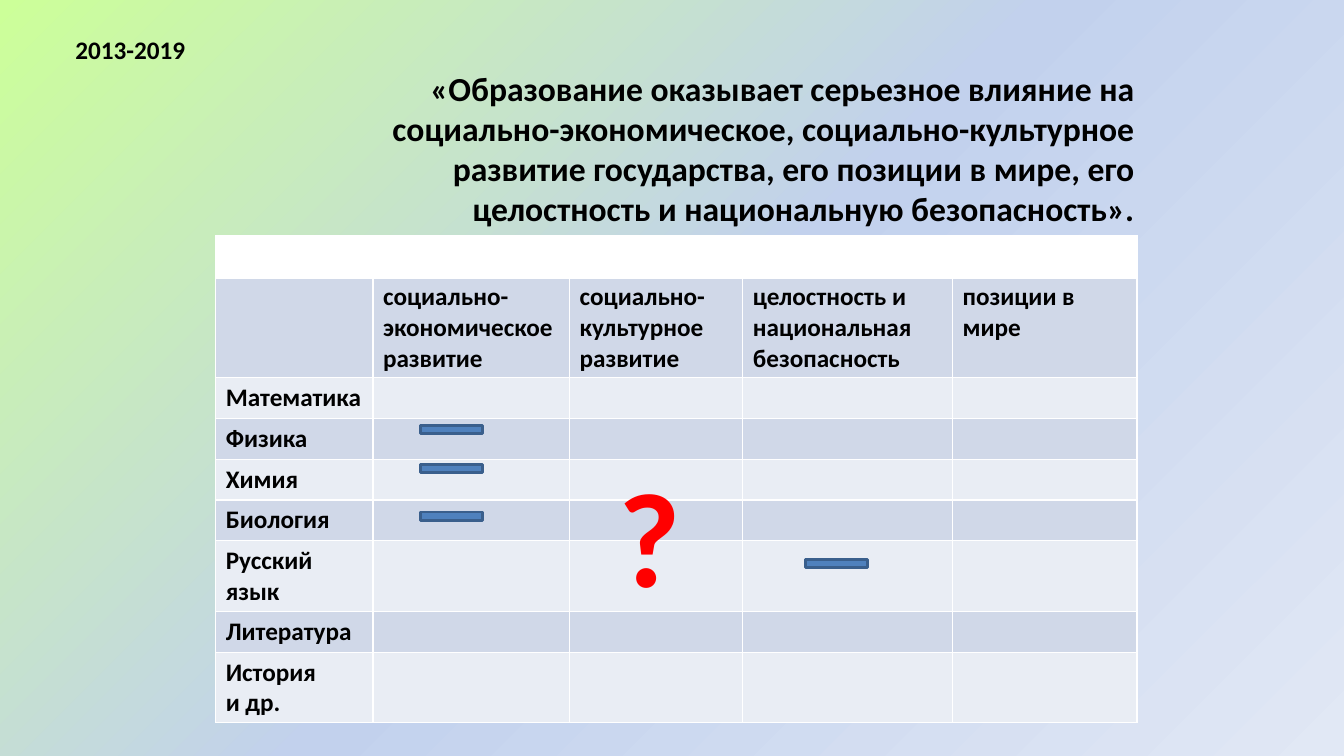
from copy import deepcopy

from lxml import etree
from pptx import Presentation
from pptx import util as u
from pptx.dml.color import RGBColor
from pptx.enum import shapes, text
from pptx.oxml import ns

BLACK = RGBColor(0x00, 0x00, 0x00)
WHITE = RGBColor(0xFF, 0xFF, 0xFF)
RED = RGBColor(0xFF, 0x00, 0x00)
BRICK = RGBColor(0xD7, 0x3A, 0x36)
BLUE = RGBColor(0x4F, 0x81, 0xBD)
DARK_BLUE = RGBColor(0x3A, 0x5F, 0x8C)
BAND_DARK = RGBColor(0xD0, 0xD8, 0xE8)
BAND_LIGHT = RGBColor(0xE9, 0xED, 0xF4)
BACKGROUND = [
    RGBColor(0xCC, 0xFF, 0x99),
    RGBColor(0xC2, 0xD1, 0xED),
    RGBColor(0xE1, 0xE8, 0xF5),
]

QUOTE = (
    "«Образование оказывает серьезное влияние на социально-экономическое, "
    "социально-культурное развитие государства, его позиции в мире, "
    "его целостность и национальную безопасность»."
)
ASPECTS = [
    "",
    "социально-экономическое развитие",
    "социально-культурное развитие",
    "целостность и национальная безопасность",
    "позиции в мире",
]
SUBJECTS = [
    "Математика",
    "Физика",
    "Химия",
    "Биология",
    "Русский язык",
    "Литература",
    "История\nи др.",
]
ASPECT_WIDTHS = [11.7, 14.63, 12.9, 15.6, 13.73]
MINUS_SIGNS = [(31.28, 56.27), (31.28, 61.47), (59.93, 74), (31.28, 67.73)]


class SlideBuilder:
    font = "Calibri"
    body_size = 18
    grid = 100

    def __init__(self, presentation):
        self.column = presentation.slide_width / self.grid
        self.row = presentation.slide_height / self.grid
        self.slide = presentation.slides.add_slide(presentation.slide_layouts[6])

    def box(self, left, top, width, height):
        units = (self.column, self.row, self.column, self.row)
        return [round(n * unit) for n, unit in zip((left, top, width, height), units)]

    def background(self, colors):
        fill = self.slide.background.fill
        fill.gradient()
        fill.gradient_angle = 315
        stop_list = self.slide.element.find(".//" + ns.qn("a:gsLst"))
        while len(stop_list) < len(colors):
            stop_list.append(deepcopy(stop_list[0]))
        for index, (stop, color) in enumerate(zip(fill.gradient_stops, colors)):
            stop.position = index / (len(colors) - 1)
            stop.color.rgb = color

    def line(self, parent, tag, position, color, points):
        line = etree.Element(ns.qn(tag), w=str(int(u.Pt(points))))
        solid = etree.SubElement(line, ns.qn("a:solidFill"))
        etree.SubElement(solid, ns.qn("a:srgbClr"), val=str(color))
        parent.insert(position, line)

    def add_runs(self, frame, words, size, color=BLACK, align=None):
        runs = []
        for index, words_line in enumerate(words.split("\n")):
            paragraph = frame.add_paragraph() if index else frame.paragraphs[0]
            paragraph.alignment = align
            run = paragraph.add_run()
            run.text = words_line
            run.font.name = self.font
            run.font.size = u.Pt(size)
            run.font.bold = True
            run.font.color.rgb = color
            runs.append(run)
        return runs

    def text(self, place, words, size, color=BLACK, align=None, outline=None):
        frame = self.slide.shapes.add_textbox(*self.box(*place)).text_frame
        frame.word_wrap = True
        frame.auto_size = text.MSO_AUTO_SIZE.SHAPE_TO_FIT_TEXT
        for run in self.add_runs(frame, words, size, color, align):
            if outline:
                self.line(run.font._element, "a:ln", 0, outline, 1.42)

    def cell(self, cell, words, color, top_border, bottom_border):
        cell.fill.solid()
        cell.fill.fore_color.rgb = color
        borders = {"L": 1, "R": 1, "T": top_border, "B": bottom_border}
        properties = cell._tc.get_or_add_tcPr()
        for position, (side, points) in enumerate(borders.items()):
            self.line(properties, f"a:ln{side}", position, WHITE, points)
        if words:
            self.add_runs(cell.text_frame, words, self.body_size)

    def table(self, left, top, widths, row_height, rows):
        place = self.box(left, top, sum(widths), row_height * len(rows))
        table = self.slide.shapes.add_table(len(rows), len(widths), *place).table
        for column, width in zip(table.columns, widths):
            column.width = round(width * self.column)
        for r, row in enumerate(rows):
            color = WHITE if r == 0 else BAND_DARK if r % 2 else BAND_LIGHT
            for c, words in enumerate(row):
                self.cell(table.cell(r, c), words, color,
                          3 if r == 1 else 1, 3 if r == 0 else 1)

    def minus(self, left, top):
        shape = self.slide.shapes.add_shape(
            shapes.MSO_SHAPE.FLOWCHART_PROCESS, *self.box(left, top, 4.65, 1.07)
        )
        shape.shadow.inherit = False
        shape.fill.solid()
        shape.fill.fore_color.rgb = BLUE
        shape.line.color.rgb = DARK_BLUE
        shape.line.width = u.Pt(2)


def main():
    presentation = Presentation()
    presentation.slide_width = u.Inches(13.33)
    presentation.slide_height = u.Inches(7.5)
    builder = SlideBuilder(presentation)

    builder.background(BACKGROUND)
    builder.text((26.55, 8.27, 58.6, 22.93), QUOTE, 24, align=text.PP_ALIGN.RIGHT)
    builder.text((4.88, 3.87, 22.28, 5.33), "2013-2019", 18)

    blanks = [""] * (len(ASPECTS) - 1)
    rows = [["", *blanks], ASPECTS, *([subject, *blanks] for subject in SUBJECTS)]
    builder.table(16.05, 31.2, ASPECT_WIDTHS, 5.4, rows)

    builder.text((45.3, 59.33, 7.65, 22.93), "?", 96, RED, outline=BRICK)
    for left, top in MINUS_SIGNS:
        builder.minus(left, top)

    presentation.save("out.pptx")


if __name__ == "__main__":
    main()
